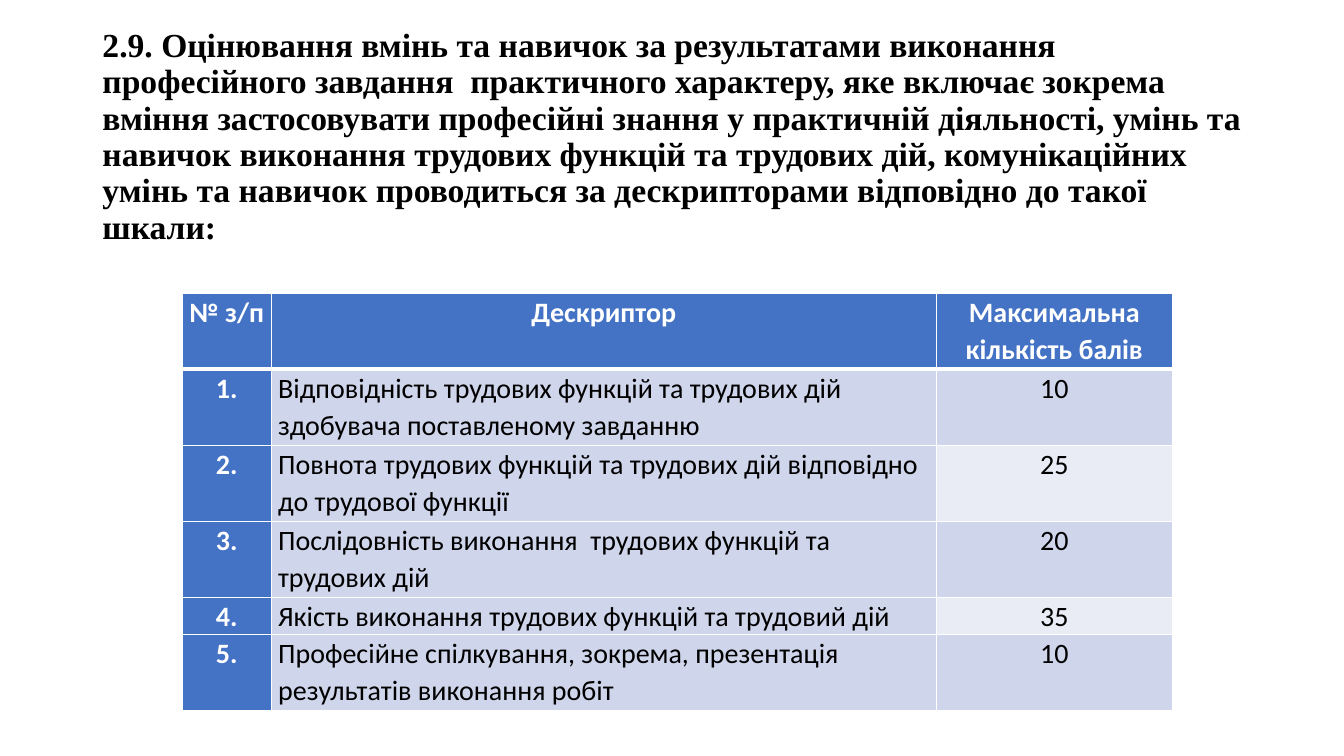
from lxml.etree import SubElement
from pptx import Presentation
from pptx.dml.color import RGBColor
from pptx.enum.text import MSO_ANCHOR, MSO_AUTO_SIZE, PP_ALIGN
from pptx.oxml.ns import qn
from pptx.util import Pt

WHITE, BLACK = "FFFFFF", "000000"
BLUE, BAND_DARK, BAND_LIGHT = "4472C4", "CFD5EA", "E9EBF5"

TITLE = (
    "2.9. Оцінювання вмінь та навичок за результатами виконання професійного "
    "завдання  практичного характеру, яке включає зокрема вміння застосовувати "
    "професійні знання у практичній діяльності, умінь та навичок виконання "
    "трудових функцій та трудових дій, комунікаційних умінь та навичок "
    "проводиться за дескрипторами відповідно до такої шкали:"
)
HEADER = ("№ з/п", "Дескриптор", "Максимальна кількість балів")
DESCRIPTORS = [
    ("Відповідність трудових функцій та трудових дій здобувача поставленому завданню", 10),
    ("Повнота трудових функцій та трудових дій відповідно до трудової функції", 25),
    ("Послідовність виконання  трудових функцій та трудових дій", 20),
    ("Якість виконання трудових функцій та трудовий дій", 35),
    ("Професійне спілкування, зокрема, презентація результатів виконання робіт", 10),
]
COLUMN_WIDTHS = (63.4, 475.2, 168.5)
ROW_HEIGHTS = (54.3, 54.3, 54.3, 54.3, 26.6, 54.3)


def color(hex_code):
    return RGBColor.from_string(hex_code)


def write(frame, text, font="Calibri", size=20, ink=BLACK, bold=False,
          align=PP_ALIGN.LEFT, line_spacing=1.07, after=8):
    para = frame.paragraphs[0]
    para.alignment = align
    para.line_spacing = line_spacing
    para.space_after = Pt(after)
    span = para.add_run()
    span.text = text
    span.font.name = font
    span.font.size = Pt(size)
    span.font.bold = bold
    span.font.color.rgb = color(ink)


def add_border(cell, side, width):
    line = SubElement(cell._tc.get_or_add_tcPr(), qn(f"a:ln{side}"), w=str(Pt(width)))
    fill = SubElement(line, qn("a:solidFill"))
    SubElement(fill, qn("a:srgbClr"), val=WHITE)


def format_cell(cell, fill, top=1, bottom=1):
    cell.margin_left = cell.margin_right = Pt(5)
    cell.margin_top = cell.margin_bottom = 0
    cell.vertical_anchor = MSO_ANCHOR.TOP
    # Borders come before the fill in the cell properties
    for side, width in (("L", 1), ("R", 1), ("T", top), ("B", bottom)):
        add_border(cell, side, width)
    cell.fill.solid()
    cell.fill.fore_color.rgb = color(fill)


def add_title(page):
    title = page.shapes.title
    title.left, title.top, title.width, title.height = Pt(66), Pt(59), Pt(828), Pt(104.4)
    frame = title.text_frame
    frame.word_wrap = True
    frame.auto_size = MSO_AUTO_SIZE.NONE
    frame.vertical_anchor = MSO_ANCHOR.MIDDLE
    frame.margin_bottom = Pt(29.6)
    write(frame, TITLE, font="Times New Roman", size=24, bold=True,
          line_spacing=0.9, after=0)


def add_score_table(page):
    rows = [HEADER] + [(f"{number}.", text, str(score))
                       for number, (text, score) in enumerate(DESCRIPTORS, 1)]
    table = page.shapes.add_table(
        len(rows), len(HEADER), Pt(130.3), Pt(209.5),
        Pt(sum(COLUMN_WIDTHS)), Pt(sum(ROW_HEIGHTS))).table
    table.first_row = table.horz_banding = False
    for column, width in zip(table.columns, COLUMN_WIDTHS):
        column.width = Pt(width)
    for row, height in zip(table.rows, ROW_HEIGHTS):
        row.height = Pt(height)

    for r, texts in enumerate(rows):
        for c, text in enumerate(texts):
            heading = r == 0 or c == 0
            light = c == 2 and r % 2 == 0
            fill = BLUE if heading else BAND_LIGHT if light else BAND_DARK
            cell = table.cell(r, c)
            format_cell(cell, fill, top=3 if r == 1 else 1, bottom=3 if r == 0 else 1)
            write(cell.text_frame, text, bold=heading, ink=WHITE if heading else BLACK,
                  align=PP_ALIGN.CENTER if heading or c == 2 else PP_ALIGN.LEFT)


def main():
    deck = Presentation()
    deck.slide_width, deck.slide_height = Pt(960), Pt(540)
    page = deck.slides.add_slide(deck.slide_layouts[5])
    add_title(page)
    add_score_table(page)
    deck.save("out.pptx")


if __name__ == "__main__":
    main()
